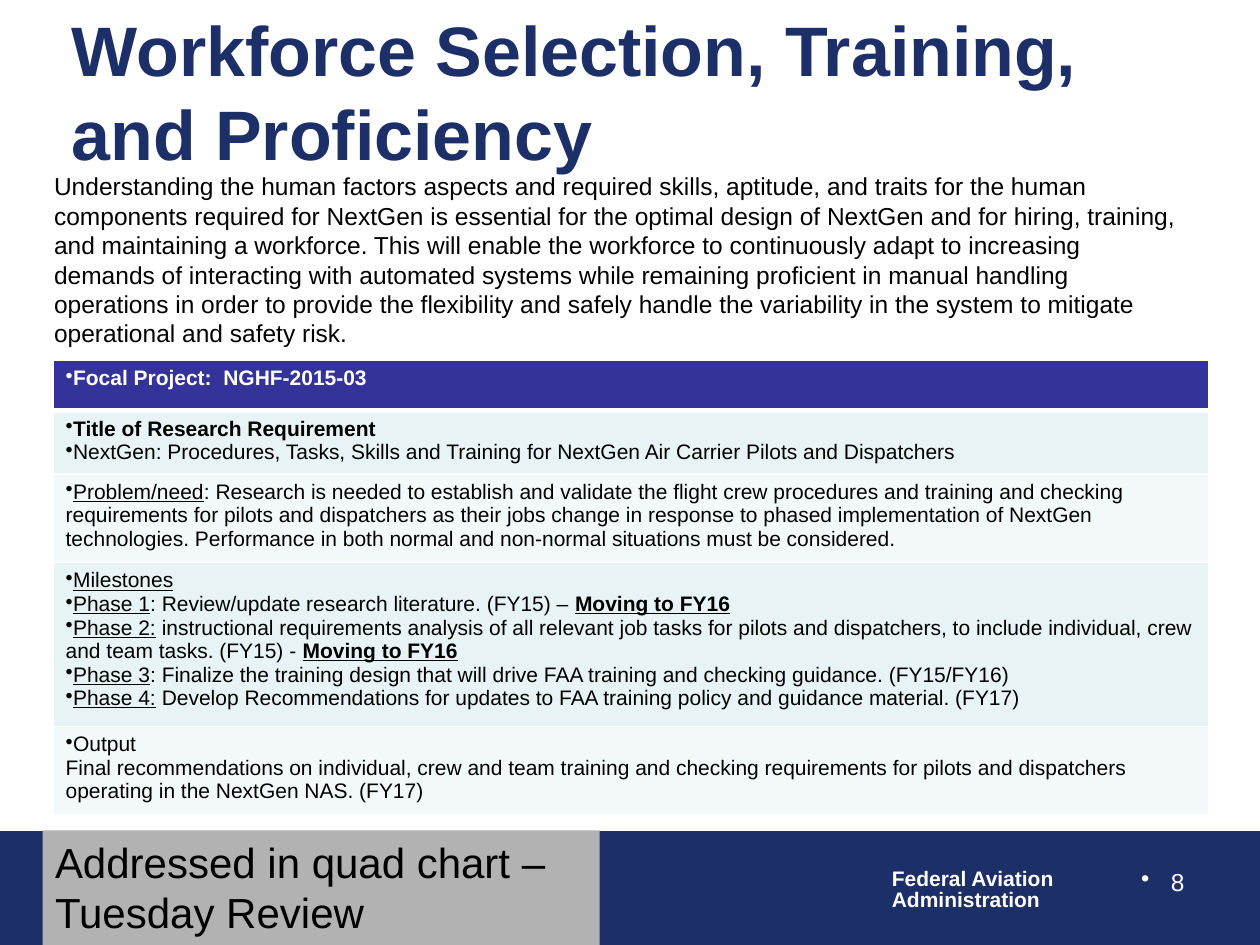
from lxml.etree import SubElement
from pptx import Presentation
from pptx.dml.color import RGBColor
from pptx.enum.shapes import MSO_SHAPE
from pptx.enum.text import MSO_ANCHOR, MSO_AUTO_SIZE, PP_ALIGN
from pptx.oxml.ns import qn
from pptx.util import Cm, Pt

NAVY, WHITE, BLACK, GRAY = "1D2F68", "FFFFFF", "000000", "B2B2B2"
HEADER, BAND_DARK, BAND_LIGHT = "333399", "E7F3F4", "F3F9FA"

INTRO = (
    "Understanding the human factors aspects and required skills, aptitude, and traits "
    "for the human components required for NextGen is essential for the optimal design of "
    "NextGen and for hiring, training, and maintaining a workforce. This will enable the "
    "workforce to continuously adapt to increasing demands of interacting with automated "
    "systems while remaining proficient in manual handling operations in order to provide "
    "the flexibility and safely handle the variability in the system to mitigate "
    "operational and safety risk."
)

# Each row: height in cm, then paragraphs of (text, style) runs; b = bold, u = underlined.
PROJECT_ROWS = [
    (1.02, [[("Focal Project:  NGHF-2015-03", "b")]]),
    (1.26, [
        [("Title of Research Requirement", "b")],
        [("NextGen: Procedures, Tasks, Skills and Training for NextGen Air Carrier "
          "Pilots and Dispatchers", "")],
    ]),
    (1.79, [
        [("Problem/need", "u"),
         (": Research is needed to establish and validate the flight crew procedures and "
          "training and checking requirements for pilots and dispatchers as their jobs "
          "change in response to phased implementation of NextGen technologies. "
          "Performance in both normal and non-normal situations must be considered.", "")],
    ]),
    (3.29, [
        [("Milestones", "u")],
        [("Phase 1", "u"), (": Review/update research literature. (FY15) – ", ""),
         ("Moving to FY16", "bu")],
        [("Phase 2:", "u"),
         (" instructional requirements analysis of all relevant job tasks for pilots and "
          "dispatchers, to include individual, crew and team tasks. (FY15) - ", ""),
         ("Moving to FY16", "bu")],
        [("Phase 3", "u"),
         (": Finalize the training design that will drive FAA training and checking "
          "guidance. (FY15/FY16)", "")],
        [("Phase 4:", "u"),
         (" Develop Recommendations for updates to FAA training policy and guidance "
          "material. (FY17)", "")],
    ]),
    (1.78, [
        [("Output", "")],
        [("Final recommendations on individual, crew and team training and checking "
          "requirements for pilots and dispatchers operating in the NextGen NAS. (FY17)",
          "")],
    ]),
]


def color(value):
    return RGBColor.from_string(value)


def add_bullet(paragraph, hanging=0):
    properties = paragraph._p.get_or_add_pPr()
    properties.set("marL", str(Cm(hanging)))
    properties.set("indent", str(-Cm(hanging)))
    SubElement(properties, qn("a:buChar")).set("char", "•")


def add_borders(cell, widths):
    """Draw white cell borders; widths are points for left, right, top, bottom."""
    properties = cell._tc.get_or_add_tcPr()
    for side, width in zip("LRTB", widths):
        line = SubElement(properties, qn(f"a:ln{side}"), w=str(Pt(width)))
        fill = SubElement(line, qn("a:solidFill"))
        SubElement(fill, qn("a:srgbClr"), val=WHITE)


class SlideBuilder:
    font_name = "Arial"

    def __init__(self, slide):
        self.slide = slide

    def add_run(self, paragraph, text, size, font_color, style=""):
        run = paragraph.add_run()
        run.text = text
        font = run.font
        font.name, font.size = self.font_name, Pt(size)
        font.color.rgb = color(font_color)
        font.bold, font.underline = "b" in style, "u" in style

    def add_lines(self, frame, lines, size, font_color, style="", align=PP_ALIGN.LEFT):
        for index, text in enumerate(lines):
            paragraph = frame.add_paragraph() if index else frame.paragraphs[0]
            paragraph.alignment = align
            self.add_run(paragraph, text, size, font_color, style)

    def title(self, box, text):
        title = self.slide.shapes.title
        title.left, title.top, title.width, title.height = map(Cm, box)
        frame = title.text_frame
        frame.auto_size = MSO_AUTO_SIZE.NONE
        frame.vertical_anchor = MSO_ANCHOR.MIDDLE
        self.add_lines(frame, [text], 40, NAVY, "b")

    def text(self, box, lines, size, font_color, style="", align=PP_ALIGN.LEFT, wrap=True):
        frame = self.slide.shapes.add_textbox(*map(Cm, box)).text_frame
        frame.word_wrap = wrap
        self.add_lines(frame, lines, size, font_color, style, align)
        return frame

    def rectangle(self, box, fill):
        shape = self.slide.shapes.add_shape(MSO_SHAPE.RECTANGLE, *map(Cm, box))
        shape.shadow.inherit = False
        shape.fill.solid()
        shape.fill.fore_color.rgb = color(fill)
        shape.line.fill.background()
        return shape

    def project_table(self, left, top, width, rows):
        height = sum(row_height for row_height, _ in rows)
        table = self.slide.shapes.add_table(
            len(rows), 1, Cm(left), Cm(top), Cm(width), Cm(height)).table
        for index, (row_height, paragraphs) in enumerate(rows):
            table.rows[index].height = Cm(row_height)
            cell = table.cell(index, 0)
            add_borders(cell, (1, 1, 3 if index == 1 else 1, 3 if index == 0 else 1))
            cell.fill.solid()
            band = BAND_DARK if index % 2 else BAND_LIGHT
            cell.fill.fore_color.rgb = color(band if index else HEADER)
            self.fill_cell(cell.text_frame, paragraphs, BLACK if index else WHITE)

    def fill_cell(self, frame, paragraphs, font_color):
        for index, runs in enumerate(paragraphs):
            paragraph = frame.add_paragraph() if index else frame.paragraphs[0]
            if not runs[0][0].startswith("Final recommendations"):
                add_bullet(paragraph)
            for text, style in runs:
                self.add_run(paragraph, text, 12, font_color, style)


def main():
    presentation = Presentation()
    presentation.slide_width, presentation.slide_height = Cm(25.4), Cm(19.05)
    title_only = presentation.slide_layouts[5]
    builder = SlideBuilder(presentation.slides.add_slide(title_only))

    footer_bar = builder.rectangle((0, 16.76, 25.4, 2.27), NAVY)
    footer_bar.line.color.rgb = color(NAVY)
    footer_bar.line.width = Pt(0.75)
    agency = builder.text((17.73, 17.4, 3.81, 1.12), ["Federal Aviation", "Administration"],
                          12, WHITE, "b", wrap=False)
    for paragraph in agency.paragraphs:
        paragraph.line_spacing = 0.85

    builder.title((1.19, 0.97, 23.55, 1.7), "Workforce Selection, Training, and Proficiency")
    builder.text((0.84, 3.33, 23.29, 3.84), [INTRO], 14, BLACK)
    number = builder.text((18.21, 17.35, 5.92, 1.32), ["8"], 14, WHITE, align=PP_ALIGN.RIGHT)
    add_bullet(number.paragraphs[0], hanging=0.6)
    builder.project_table(1.07, 7.26, 23.29, PROJECT_ROWS)

    note = builder.rectangle((0.86, 16.74, 11.23, 2.31), GRAY).text_frame
    note.word_wrap = True
    note.vertical_anchor = MSO_ANCHOR.TOP
    builder.add_lines(note, ["Addressed in quad chart – Tuesday Review"], 24, BLACK)

    presentation.save("out.pptx")


if __name__ == "__main__":
    main()
